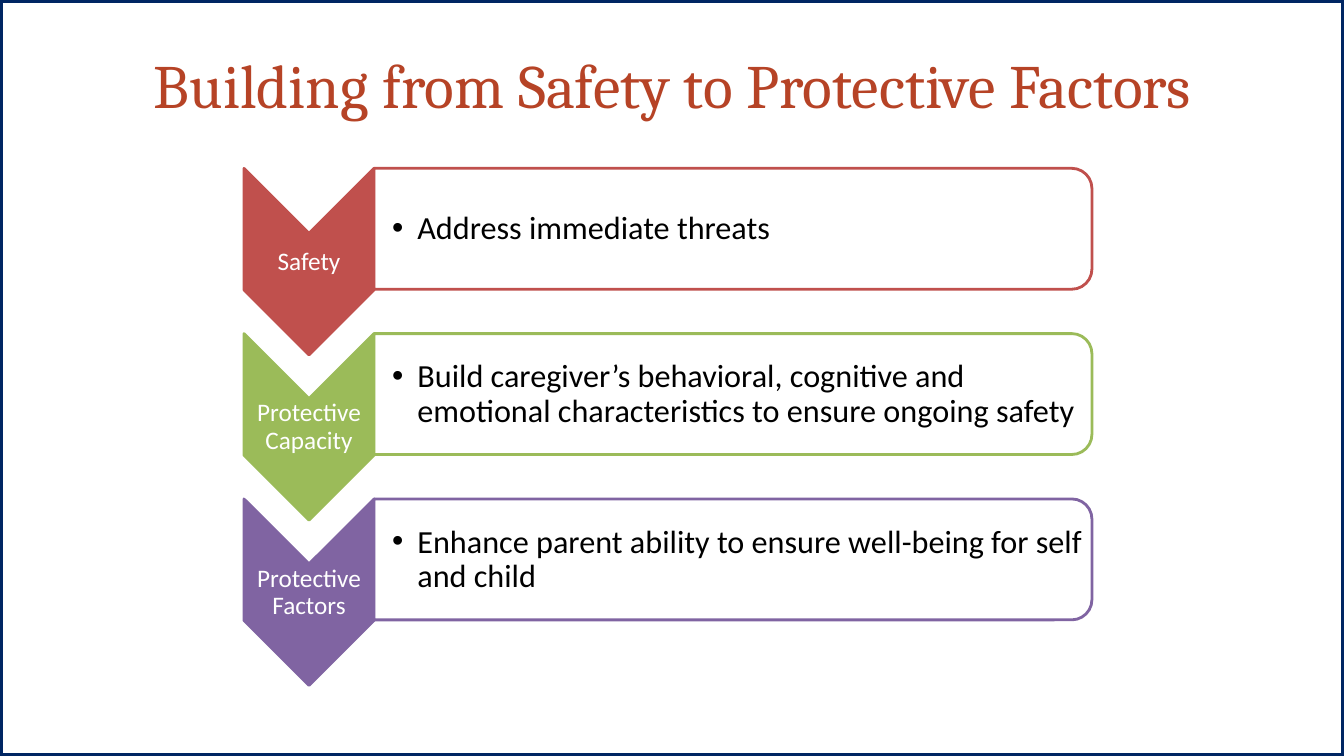
from dataclasses import dataclass

from lxml.etree import SubElement
from pptx import Presentation
from pptx.dml.color import RGBColor as RGB
from pptx.enum.shapes import MSO_SHAPE as Kind
from pptx.enum.text import MSO_ANCHOR as Anchor, PP_ALIGN as Align
from pptx.oxml.ns import qn
from pptx.shapes.autoshape import Shape
from pptx.slide import Slide
from pptx.util import Inches, Pt

WIDE, HIGH = 13.33, 7.5
STEP = 1.64  # distance between rows


@dataclass
class Box:
    left: float
    top: float
    width: float
    height: float

    def down(self, gap: float) -> "Box":
        return Box(self.left, self.top + gap, self.width, self.height)

    def sides(self) -> list[int]:
        return [Inches(n) for n in (self.left, self.top, self.width, self.height)]


@dataclass
class Font:
    name: str
    size: float
    color: str


@dataclass
class Stage:
    label: str
    note: str
    color: str


TITLE = Font("Cambria", 44, "B64326")
LABEL = Font("Calibri", 18, "FFFFFF")
NOTE = Font("Calibri", 23, "000000")

STAGES = [
    Stage("Safety", "Address immediate threats", "C0504D"),
    Stage("Protective Capacity",
          "Build caregiver’s behavioral, cognitive and emotional "
          "characteristics to ensure ongoing safety", "9BBB59"),
    Stage("Protective Factors",
          "Enhance parent ability to ensure well-being for self and child",
          "8064A2"),
]


def paint(target, color: str) -> None:
    """Apply a hex colour to a fill or a line's fill."""
    target.solid()
    target.fore_color.rgb = RGB.from_string(color)


def add_form(slide: Slide, kind: Kind, box: Box, line: str, width: float,
             fill: str = "", turn: float = 0) -> Shape:
    form = slide.shapes.add_shape(kind, *box.sides())
    form.shadow.inherit = False
    form.rotation = turn
    if fill:
        paint(form.fill, fill)
    else:
        form.fill.background()
    paint(form.line.fill, line)
    form.line.width = Pt(width)
    return form


def add_text(slide: Slide, box: Box, text: str, font: Font,
             pads: tuple[float, ...], anchor: Anchor = Anchor.MIDDLE,
             align: Align = Align.CENTER, space: float = 0.9,
             dot: bool = False) -> None:
    frame = slide.shapes.add_textbox(*box.sides()).text_frame
    frame.word_wrap = True
    frame.vertical_anchor = anchor
    (frame.margin_left, frame.margin_top,
     frame.margin_right, frame.margin_bottom) = map(Inches, pads)
    para = frame.paragraphs[0]
    para.alignment = align
    para.line_spacing = space
    if dot:
        props = para._p.get_or_add_pPr()
        props.set("marL", str(Inches(0.25)))
        props.set("indent", str(Inches(-0.25)))
        SubElement(props, qn("a:buFont"), typeface="Arial")
        SubElement(props, qn("a:buChar"), char="•")
    run = para.add_run()
    run.text = text
    run.font.name = font.name
    run.font.size = Pt(font.size)
    paint(run.font.fill, font.color)


def add_stage(slide: Slide, stage: Stage, gap: float) -> None:
    # Arrow and its label
    add_form(slide, Kind.CHEVRON, Box(2.14, 1.95, 1.85, 1.29).down(gap),
             stage.color, 2, stage.color, 90)
    add_text(slide, Box(2.42, 2.32, 1.29, 0.56).down(gap), stage.label,
             LABEL, (0.01,) * 4)
    # Panel and its note
    panel = add_form(slide, Kind.ROUND_2_SAME_RECTANGLE,
                     Box(6.67, -1.29, 1.2, 7.12).down(gap),
                     stage.color, 2, "FFFFFF", 90)
    tint = panel.fill._xPr.find(qn("a:solidFill"))[0]
    SubElement(tint, qn("a:alpha"), val="90000")
    add_text(slide, Box(3.71, 1.73, 7.06, 1.09).down(gap), stage.note,
             NOTE, (0.18, 0.02, 0.02, 0.02), align=Align.LEFT, dot=True)


def main() -> None:
    deck = Presentation()
    deck.slide_width, deck.slide_height = Inches(WIDE), Inches(HIGH)
    slide = deck.slides.add_slide(deck.slide_layouts[6])

    # Frame around the slide
    add_form(slide, Kind.RECTANGLE, Box(0, 0, WIDE, HIGH), "002663", 4.5)

    # Stages from top to bottom
    for row, stage in enumerate(STAGES):
        add_stage(slide, stage, row * STEP)

    # Title
    add_text(slide, Box(0.76, 0.42, 11.83, 1.08),
             "Building from Safety to Protective Factors", TITLE,
             (0.1, 0.05, 0.1, 0.05), Anchor.TOP, space=1.0)

    deck.save("out.pptx")


if __name__ == "__main__":
    main()
